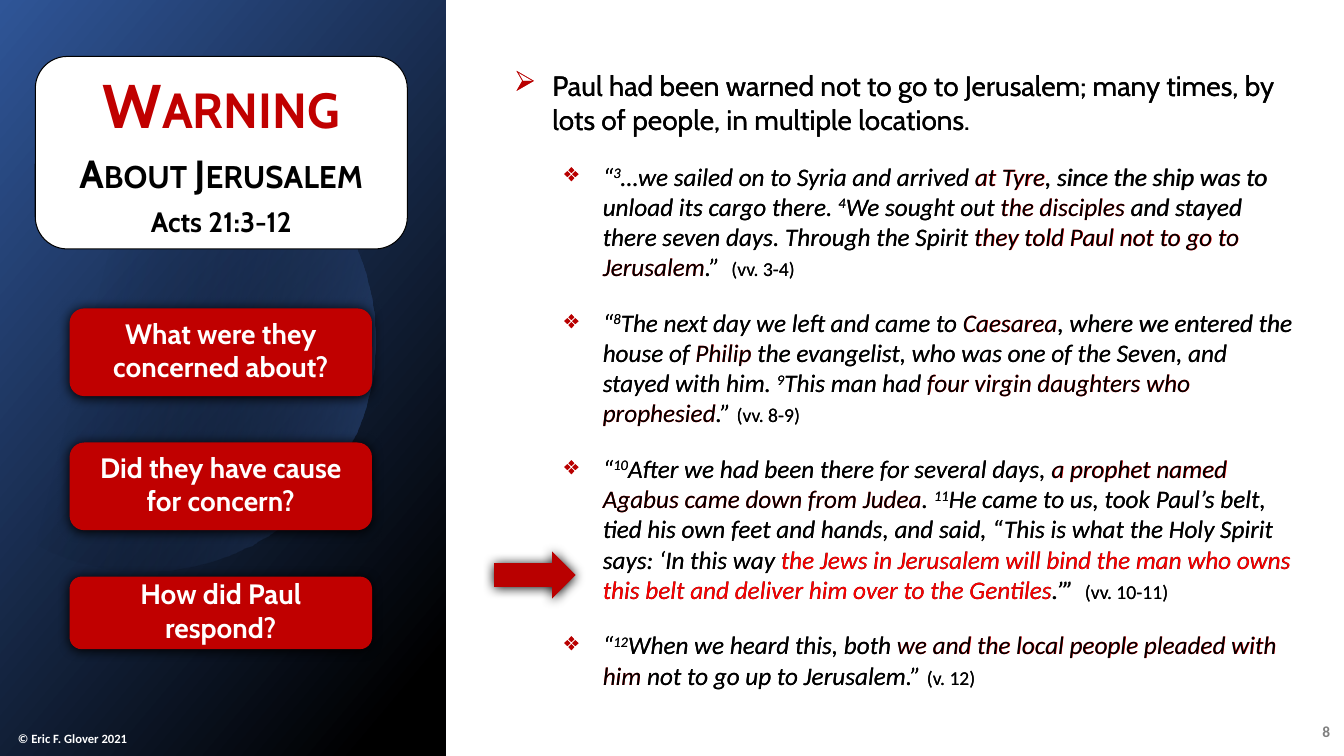
import dataclasses
import math

import pptx
import pptx.dml.color
import pptx.enum.shapes
import pptx.enum.text
import pptx.oxml
import pptx.oxml.ns
import pptx.util
from lxml import etree

PX = 9144
SHAPE = pptx.enum.shapes.MSO_SHAPE
ALIGN = pptx.enum.text.PP_ALIGN
ANCHOR = pptx.enum.text.MSO_ANCHOR
AUTO = pptx.enum.text.MSO_AUTO_SIZE
qn = pptx.oxml.ns.qn


@dataclasses.dataclass(frozen=True)
class Theme:
    head: str = "Cabin"
    body: str = "Calibri"
    black: str = "000000"
    white: str = "FFFFFF"
    gray: str = "808080"
    navy: str = "2F5597"
    blue: str = "4472C4"
    crimson: str = "C00000"
    bullet: str = "B90000"
    red: str = "FF0000"
    title: int = 44
    subtitle: int = 28
    lead: int = 20
    quote: int = 18
    verses: int = 14
    number: int = 11
    credit: int = 9


LEAD = ("Paul had been warned not to go to Jerusalem; many times, "
        "by lots of people, in multiple locations.")
# fmt marks: ^ superscript, ~ early highlight, * late highlight, # verse reference
QUOTES = [
    "“|^3|…we sailed on to Syria and arrived |~at Tyre|, since the ship was to unload its cargo there. "
    "|^4|We sought out |~the disciples| and stayed there seven days. Through the Spirit "
    "|~they told Paul not to go to Jerusalem|.”  |#(vv. 3-4)",
    "“|^8|The next day we left and came to |~Caesarea|, where we entered the house of |~Philip"
    "| the evangelist, who was one of the Seven, and stayed with him. "
    "|^9|This man had |~four virgin daughters who prophesied|.” |#(vv. 8-9)",
    "“|^10|After we had been there for several days, |~a prophet named Agabus came down from Judea|. "
    "|^11|He came to us, took Paul’s belt, tied his own feet and hands, and said, "
    "“This is what the Holy Spirit says: ‘In this way "
    "|*the Jews in Jerusalem will bind the man who owns this belt and deliver him over to the Gentiles"
    "|.’”  |#(vv. 10-11)",
    "“|^12|When we heard this, both |~we and the local people pleaded with him"
    "| not to go up to Jerusalem.” |#(v. 12)",
]
BUTTONS = [
    (306, 87, "What were they concerned about?"),
    (439, 87, "Did they have cause for concern?"),
    (572, 72, "How did Paul respond?"),
]


def put(obj, **values):
    for name, value in values.items():
        setattr(obj, name, value)


def rgb(color):
    return pptx.dml.color.RGBColor.from_string(color)


class Deck:
    def __init__(self, theme):
        self.t = theme
        self.prs = pptx.Presentation()
        put(self.prs, slide_width=1333 * PX, slide_height=750 * PX)
        self.s = self.prs.slides.add_slide(self.prs.slide_layouts[6])

    def shape(self, kind, x, y, w, h, fill=None, line=None):
        sp = self.s.shapes.add_shape(kind, x * PX, y * PX, w * PX, h * PX)
        return self.paint(sp, fill, line)

    def paint(self, sp, fill=None, line=None):
        sp.shadow.inherit = False
        if fill:
            sp.fill.solid()
            sp.fill.fore_color.rgb = rgb(fill)
        if line:
            sp.line.color.rgb = rgb(line)
            sp.line.width = pptx.util.Pt(0.75)
        else:
            sp.line.fill.background()
        return sp

    def gradient(self, sp, angle, *stops):
        sp.fill.gradient()
        sp.fill.gradient_angle = 360 - angle
        for stop, (position, color, alpha) in zip(sp.fill.gradient_stops, stops):
            stop.position = position
            stop.color.rgb = rgb(color)
        colors = sp._element.spPr.iter(qn("a:srgbClr"))
        for node, (position, color, alpha) in zip(list(colors), stops):
            if alpha < 100:
                etree.SubElement(node, qn("a:alpha"), val=str(alpha * 1000))

    def disc(self, cx, cy, radius):
        limit = math.acos(-cx / radius)
        steps = 120
        angles = [limit * (2 * i / steps - 1) for i in range(steps + 1)]
        points = [(round(cx + radius * math.cos(a)), round(cy + radius * math.sin(a))) for a in angles]
        fb = self.s.shapes.build_freeform(*points[0], scale=PX)
        fb.add_line_segments(points[1:], close=True)
        return self.paint(fb.convert_to_shape())

    def glow(self, sp):
        effects = sp._element.spPr.find(qn("a:effectLst"))
        shadow = etree.SubElement(effects, qn("a:outerShdw"), blurRad="107950", dist="12700",
                                  dir="5400000", algn="t", rotWithShape="0")
        etree.SubElement(shadow, qn("a:srgbClr"), val=self.t.black)

    def box(self, x, y, w, h, **frame):
        tf = self.s.shapes.add_textbox(x * PX, y * PX, w * PX, h * PX).text_frame
        put(tf, word_wrap=True, **frame)
        return tf

    def para(self, tf, **values):
        p = tf.paragraphs[0]
        if p.runs:
            p = tf.add_paragraph()
        put(p, **values)
        return p

    def run(self, p, text, color, size, font, attrs=None, **values):
        r = p.add_run()
        r.text = text
        put(r.font, name=font, size=pptx.util.Pt(size), **values)
        r.font.color.rgb = rgb(color)
        for name, value in (attrs or {}).items():
            r._r.get_or_add_rPr().set(name, value)

    def bullet(self, p, char, indent):
        pPr = p._p.get_or_add_pPr()
        put(p, space_after=pptx.util.Pt(18))
        pPr.set("marL", str(indent * PX))
        pPr.set("indent", str(-38 * PX))
        color = etree.SubElement(pPr, qn("a:buClr"))
        etree.SubElement(color, qn("a:srgbClr"), val=self.t.bullet)
        etree.SubElement(pPr, qn("a:buChar"), char=char)

    def button(self, y, h, text):
        sp = self.shape(SHAPE.ROUNDED_RECTANGLE, 69, y, 300, h, self.t.crimson)
        self.glow(sp)
        put(sp.text_frame, word_wrap=True, vertical_anchor=ANCHOR.MIDDLE,
            margin_top=0, margin_bottom=5 * PX)
        p = self.para(sp.text_frame, alignment=ALIGN.CENTER)
        self.run(p, text, self.t.white, self.t.lead, self.t.head, bold=True)

    def title_card(self):
        t = self.t
        tf = self.shape(SHAPE.ROUNDED_RECTANGLE, 35, 56, 369, 191, t.white, t.black).text_frame
        put(tf, word_wrap=True, vertical_anchor=ANCHOR.MIDDLE,
            margin_left=0, margin_top=0, margin_right=0, margin_bottom=0)
        small = {"cap": "small"}
        for text, color, size, attrs in [("Warning", t.crimson, t.title, small),
                                         ("About Jerusalem", t.black, t.subtitle, small),
                                         ("Acts 21:3-12", t.black, t.lead, None)]:
            p = self.para(tf, alignment=ALIGN.CENTER, space_after=pptx.util.Pt(6))
            self.run(p, text, color, size, t.head, attrs, bold=True)

    def passage(self, highlight):
        t = self.t
        tf = self.box(500, 63, 798, 633, auto_size=AUTO.SHAPE_TO_FIT_TEXT)
        p = self.para(tf)
        self.bullet(p, "➢", 38)
        self.run(p, LEAD, t.black, t.lead, t.head)
        for quote in QUOTES:
            p = self.para(tf, level=1)
            self.bullet(p, "❖", 88)
            for part in quote.split("|"):
                mark = part[0] if part[0] in "^~*#" else ""
                self.run(p, part[len(mark):], t.red if mark == highlight else t.black,
                         t.verses if mark == "#" else t.quote, t.body,
                         {"baseline": "30000"} if mark == "^" else None, italic=mark != "#")

    def label(self, x, y, w, h, text, color, size, anchor, align):
        tf = self.box(x, y, w, h, vertical_anchor=anchor)
        p = self.para(tf, alignment=align)
        self.run(p, text, color, size, self.t.body, bold=True)


def main():
    t = Theme()
    deck = Deck(t)
    panel = deck.shape(SHAPE.RECTANGLE, 0, 0, 442, 750)
    deck.gradient(panel, 40, (0, t.navy, 100), (0.92, t.black, 100))
    deck.label(8, 717, 157, 28, "© Eric F. Glover 2021", t.white, t.credit, ANCHOR.BOTTOM, ALIGN.LEFT)
    deck.label(1280, 706, 49, 40, "8", t.gray, t.number, ANCHOR.MIDDLE, ALIGN.RIGHT)
    deck.gradient(deck.disc(143, 338, 229), 14, (0.29, t.black, 0), (1, t.blue, 43))
    deck.title_card()
    for highlight in "~*":
        deck.passage(highlight)
    for button in BUTTONS:
        deck.button(*button)
    deck.glow(deck.shape(SHAPE.RIGHT_ARROW, 490, 547, 81, 47, t.bullet))
    deck.prs.save("out.pptx")


if __name__ == "__main__":
    main()
